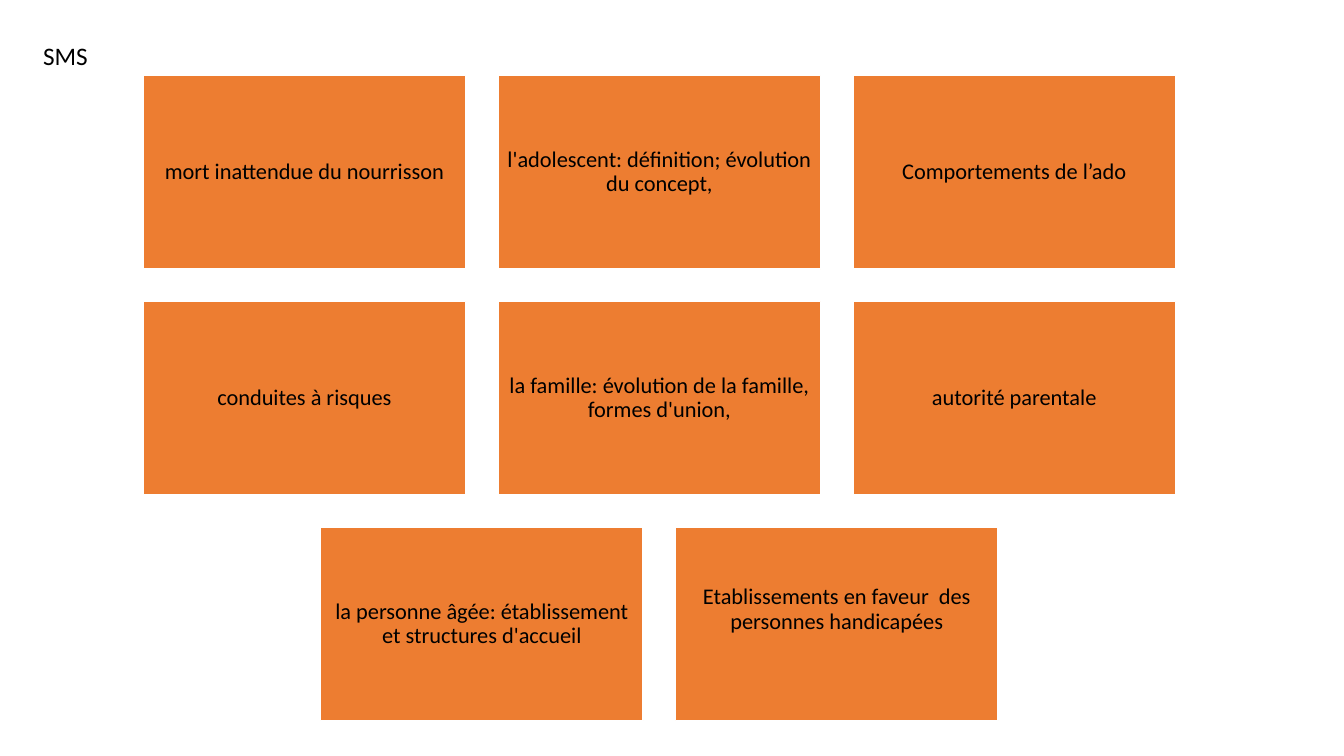
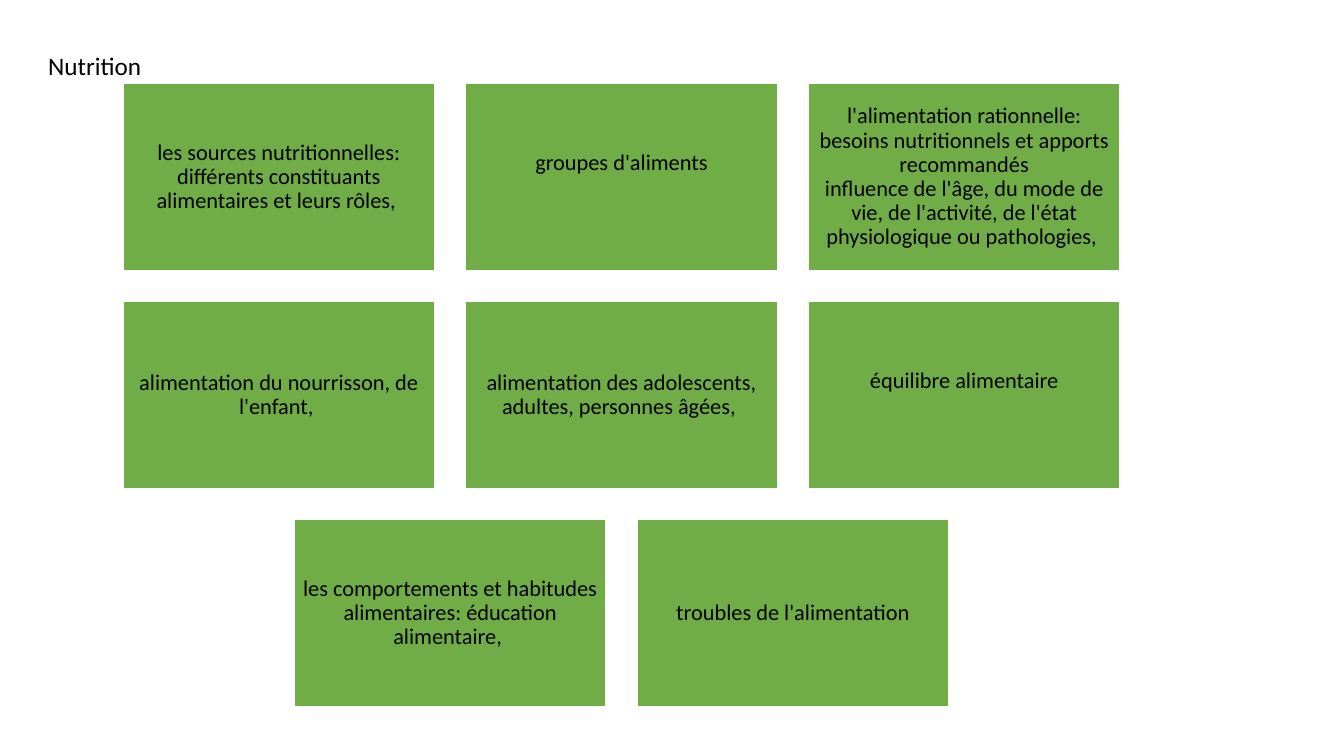
from pptx import Presentation
from pptx.dml.color import RGBColor
from pptx.enum.shapes import MSO_SHAPE
from pptx.enum.text import MSO_ANCHOR, PP_ALIGN
from pptx.util import Inches, Pt

# Colours
ORANGE = RGBColor(0xED, 0x7D, 0x31)
GREEN = RGBColor(0x70, 0xAD, 0x47)
BLACK = RGBColor(0, 0, 0)
WHITE = RGBColor(0xFF, 0xFF, 0xFF)

# Shared formats
FONT = "Calibri"
COLS = 3
INSET = 0.07
LIFT = 0.28  # extra bottom inset for raised labels
FRAME = {
    "word_wrap": True,
    "vertical_anchor": MSO_ANCHOR.MIDDLE,
    "margin_left": Inches(INSET),
    "margin_right": Inches(INSET),
    "margin_top": Inches(INSET),
    "margin_bottom": Inches(INSET),
}
PARA = {"alignment": PP_ALIGN.CENTER, "line_spacing": 0.9}

# Slide content: title with its place, then tiles with origin and width
TOPICS = [
    {
        "title": ("SMS", 0.33, 0.35, 3.3),
        "fill": ORANGE,
        "left": 1.42, "top": 0.75, "width": 3.2,
        "tiles": [
            "mort inattendue du nourrisson",
            "l'adolescent: définition; évolution du concept,",
            "Comportements de l’ado",
            "conduites à risques",
            "la famille: évolution de la famille, formes d'union,",
            "autorité parentale",
            "la personne âgée: établissement et structures d'accueil",
            "Etablissements en faveur  des personnes handicapées",
        ],
        "raised": [7],
    },
    {
        "title": ("Nutrition", 0.38, 0.45, 1.74),
        "fill": GREEN,
        "left": 1.22, "top": 0.83, "width": 3.09,
        "tiles": [
            "les sources nutritionnelles: différents constituants "
            "alimentaires et leurs rôles, ",
            "groupes d'aliments",
            "l'alimentation rationnelle: besoins nutritionnels et apports "
            "recommandés\ninfluence de l'âge, du mode de vie, de l'activité, "
            "de l'état physiologique ou pathologies, ",
            "alimentation du nourrisson, de l'enfant, ",
            "alimentation des adolescents, adultes, personnes âgées, ",
            "équilibre alimentaire",
            "les comportements et habitudes alimentaires: "
            "éducation alimentaire, ",
            "troubles de l'alimentation",
        ],
        "raised": [1, 5],
    },
]


def style(item, form):
    for name, value in form.items():
        setattr(item, name, value)


def write(frame, text, size):
    para = frame.paragraphs[0]
    para.text = text
    for run in para.runs:
        style(run.font, {"name": FONT, "size": Pt(size)})
        run.font.color.rgb = BLACK
    return para


def add_title(slide, text, left, top, width):
    box = slide.shapes.add_textbox(
        Inches(left), Inches(top), Inches(width), Inches(0.4))
    box.text_frame.word_wrap = True
    write(box.text_frame, text, 18)


def add_tile(slide, text, left, top, width, fill, raised):
    tile = slide.shapes.add_shape(
        MSO_SHAPE.RECTANGLE, Inches(left), Inches(top),
        Inches(width), Inches(0.6 * width))
    tile.shadow.inherit = False
    tile.fill.solid()
    tile.fill.fore_color.rgb = fill
    tile.line.color.rgb = WHITE
    tile.line.width = Pt(1)
    frame = tile.text_frame
    style(frame, FRAME)
    if raised:
        frame.margin_bottom = Inches(INSET + LIFT)
    style(write(frame, text, 16), PARA)


def add_grid(slide, topic):
    # Gaps are a tenth of the tile width; a short last row is centred
    tiles, width = topic["tiles"], topic["width"]
    for i, text in enumerate(tiles):
        row, col = divmod(i, COLS)
        count = min(COLS, len(tiles) - row * COLS)
        shift = col + (COLS - count) / 2
        add_tile(slide, text,
                 topic["left"] + 1.1 * width * shift,
                 topic["top"] + 0.7 * width * row,
                 width, topic["fill"], i in topic["raised"])


def main():
    deck = Presentation()
    deck.slide_width, deck.slide_height = Inches(13.33), Inches(7.5)
    for topic in TOPICS:
        slide = deck.slides.add_slide(deck.slide_layouts[6])
        add_title(slide, *topic["title"])
        add_grid(slide, topic)
    deck.save("out.pptx")


if __name__ == "__main__":
    main()
